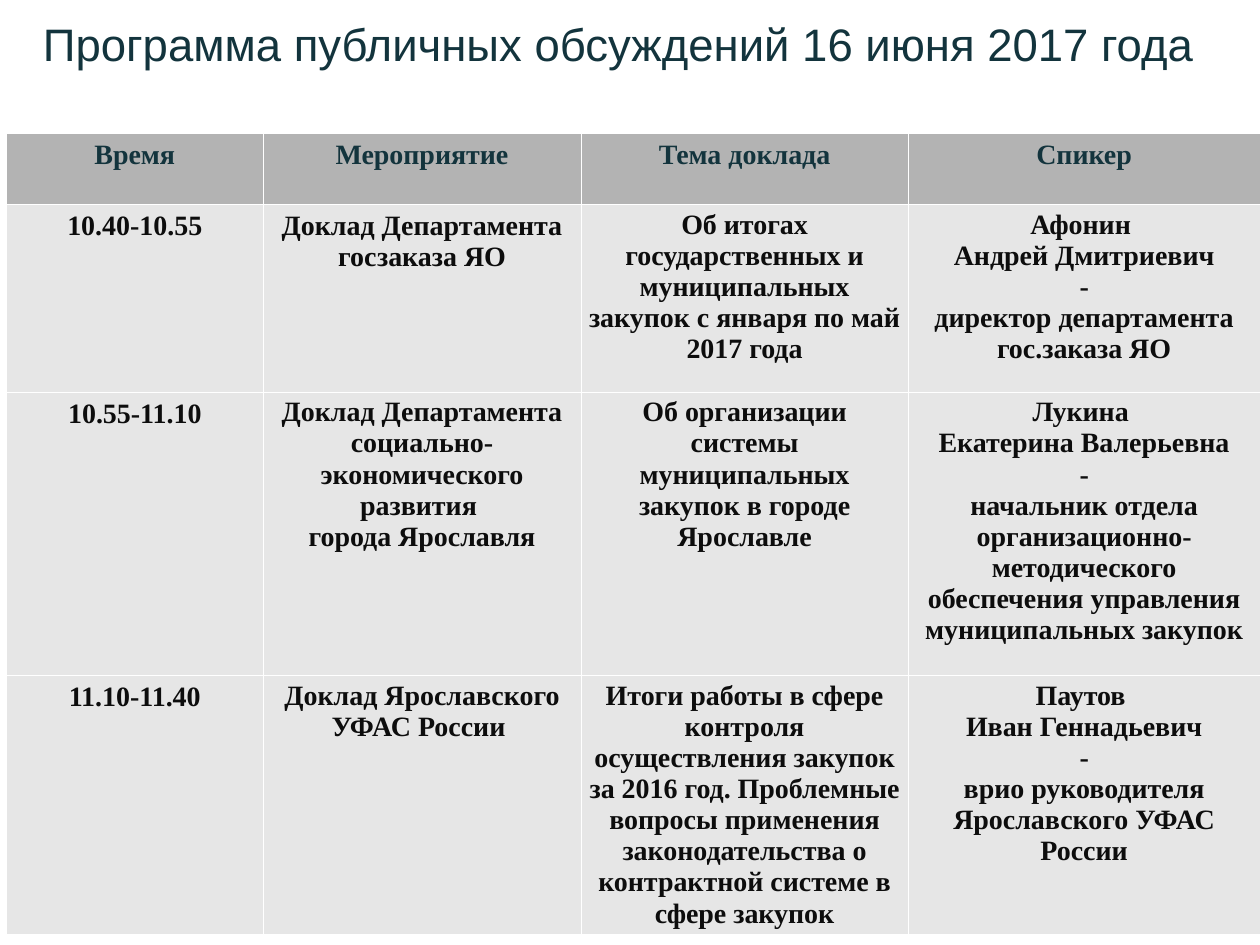
from dataclasses import dataclass

from lxml import etree
from pptx import Presentation
from pptx import util as u
from pptx.dml.color import RGBColor
from pptx.enum import text
from pptx.oxml import ns


@dataclass(frozen=True)
class Theme:
    heading: str = "13343D"
    body: str = "0D0D0D"
    header_fill: str = "B3B3B3"
    row_fill: str = "E6E6E6"
    border: str = "FFFFFF"
    title_font: str = "Arial"
    table_font: str = "Times New Roman"
    title_size: int = 26
    table_size: int = 16


theme = Theme()


def write(frame, content, *, font, size, color, bold=False, align=text.PP_ALIGN.CENTER):
    frame.word_wrap = True
    for index, line in enumerate(content.split("\n")):
        paragraph = frame.paragraphs[0] if index == 0 else frame.add_paragraph()
        paragraph.alignment = align
        run = paragraph.add_run()
        run.text = line
        run.font.name = font
        run.font.size = u.Pt(size)
        run.font.bold = bold
        run.font.color.rgb = RGBColor.from_string(color)


def add_borders(cell, color, width):
    properties = cell._tc.get_or_add_tcPr()
    for side in ("lnL", "lnR", "lnT", "lnB"):
        line = etree.SubElement(properties, ns.qn(f"a:{side}"), w=str(u.Pt(width)))
        fill = etree.SubElement(line, ns.qn("a:solidFill"))
        etree.SubElement(fill, ns.qn("a:srgbClr"), val=color)


presentation = Presentation()
presentation.slide_width = u.Inches(10)
presentation.slide_height = u.Inches(7.5)
slide = presentation.slides.add_slide(presentation.slide_layouts[5])

title = slide.shapes.title
title.left, title.top = u.Inches(0.24), u.Inches(0.08)
title.width, title.height = u.Inches(9.68), u.Inches(0.79)
title.text_frame.auto_size = text.MSO_AUTO_SIZE.NONE
title.text_frame.vertical_anchor = text.MSO_ANCHOR.TOP
write(title.text_frame, "Программа публичных обсуждений 16 июня 2017 года",
      font=theme.title_font, size=theme.title_size, color=theme.heading,
      align=text.PP_ALIGN.LEFT)

program = [
    ["Время", "Мероприятие", "Тема доклада", "Спикер"],
    ["10.40-10.55",
     "Доклад Департамента госзаказа ЯО",
     "Об итогах государственных и муниципальных закупок с января по май 2017 года",
     "Афонин \nАндрей Дмитриевич\n-\nдиректор департамента гос.заказа ЯО"],
    ["10.55-11.10",
     "Доклад Департамента социально-экономического развития \nгорода Ярославля",
     "Об организации системы муниципальных закупок в городе Ярославле",
     "Лукина \nЕкатерина Валерьевна\n-\nначальник отдела организационно-методического "
     "обеспечения управления муниципальных закупок"],
    ["11.10-11.40",
     "Доклад Ярославского УФАС России ",
     "Итоги работы в сфере контроля осуществления закупок за 2016 год. Проблемные вопросы "
     "применения законодательства о контрактной системе в сфере закупок",
     "Паутов \nИван Геннадьевич\n-\nврио руководителя Ярославского УФАС России"],
]
column_widths = [2.04, 2.52, 2.6, 2.79]
row_heights = [0.56, 1.49, 2.25, 1.98]

schedule = slide.shapes.add_table(
    len(row_heights), len(column_widths), u.Inches(0.05), u.Inches(1.06),
    u.Inches(sum(column_widths)), u.Inches(sum(row_heights))).table
for column, width in zip(schedule.columns, column_widths):
    column.width = u.Inches(width)
for row, height in zip(schedule.rows, row_heights):
    row.height = u.Inches(height)

for r, entries in enumerate(program):
    for c, entry in enumerate(entries):
        cell = schedule.cell(r, c)
        header = r == 0
        roomy = header or c == 0 or (r, c) == (1, 1)
        cell.margin_left = cell.margin_right = u.Inches(0.1 if roomy else 0.04)
        cell.margin_top = cell.margin_bottom = u.Inches(0.05 if roomy else 0.04)
        add_borders(cell, theme.border, 0.06)
        cell.fill.solid()
        cell.fill.fore_color.rgb = RGBColor.from_string(
            theme.header_fill if header else theme.row_fill)
        write(cell.text_frame, entry, font=theme.table_font, size=theme.table_size,
              color=theme.heading if header else theme.body, bold=True)

presentation.save("out.pptx")
